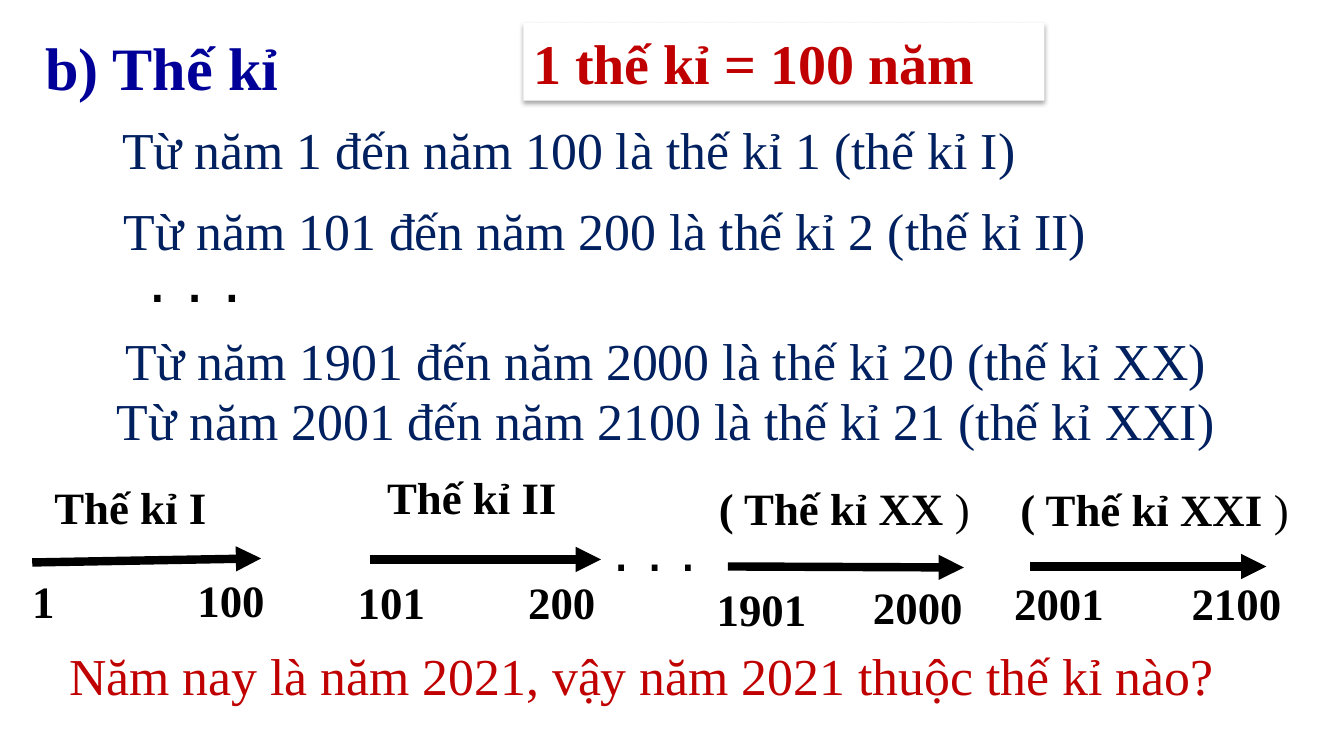
from lxml import etree
from pptx import Presentation
from pptx.dml.color import RGBColor
from pptx.enum.shapes import MSO_CONNECTOR, MSO_SHAPE
from pptx.enum.text import MSO_ANCHOR, MSO_AUTO_SIZE, PP_ALIGN
from pptx.oxml import parse_xml
from pptx.oxml.ns import nsdecls, qn
from pptx.util import Inches, Pt

LEFT, CENTER = PP_ALIGN.LEFT, PP_ALIGN.CENTER
TOP, NO_FIT = MSO_ANCHOR.TOP, MSO_AUTO_SIZE.NONE
RECT, STRAIGHT = MSO_SHAPE.RECTANGLE, MSO_CONNECTOR.STRAIGHT
SERIF, SANS = "Times New Roman", "Arial"
BLACK, WHITE, NAVY, BLUE, RED = "000000", "FFFFFF", "002060", "000099", "C00000"
WIDE, TIGHT = (0.13, 0.07), (0.1, 0.05)


def color(code):
    return RGBColor.from_string(code)


def write(shape, text, size=32, font=SERIF, ink=BLACK, bold=False,
          align=LEFT, inset=WIDE, tail=""):
    """Fill a shape with one paragraph; tail follows in regular weight."""
    frame = shape.text_frame
    frame.word_wrap = True
    frame.auto_size = NO_FIT
    frame.vertical_anchor = TOP
    frame.margin_left = frame.margin_right = Inches(inset[0])
    frame.margin_top = frame.margin_bottom = Inches(inset[1])
    para = frame.paragraphs[0]
    para.alignment = align
    for part, heavy in ((text, bold), (tail, False)):
        if part:
            run = para.add_run()
            run.text = part
            run.font.size = Pt(size)
            run.font.name = font
            run.font.bold = heavy
            run.font.color.rgb = color(ink)


class Board:
    """Style and current slide."""

    def __init__(self, deck):
        self.slide = deck.slides.add_slide(deck.slide_layouts[5])
        self.shapes = self.slide.shapes

    def title(self, box, text, **style):
        head = self.shapes.title
        head.left, head.top, head.width, head.height = map(Inches, box)
        write(head, text, **style)

    def text(self, box, text, **style):
        write(self.shapes.add_textbox(*map(Inches, box)), text, **style)

    def card(self, box, text, **style):
        card = self.shapes.add_shape(RECT, *map(Inches, box))
        card.shadow.inherit = False
        card.fill.solid()
        card.fill.fore_color.rgb = color(WHITE)
        card.line.fill.background()
        glow = parse_xml(
            f'<a:outerShdw {nsdecls("a")} blurRad="{Pt(3.1)}" dist="{Pt(1.8)}" '
            f'dir="5400000" algn="t" rotWithShape="0"><a:srgbClr val="{BLACK}">'
            '<a:alpha val="35000"/></a:srgbClr></a:outerShdw>')
        card.element.spPr.find(qn("a:effectLst")).append(glow)
        write(card, text, **style)

    def arrow(self, *ends):
        line = self.shapes.add_connector(STRAIGHT, *map(Inches, ends))
        line.line.color.rgb = color(BLACK)
        line.line.width = Pt(6)
        props = line.element.spPr.find(qn("a:ln"))
        etree.SubElement(props, qn("a:tailEnd"), type="triangle")
        etree.SubElement(line.element.spPr, qn("a:effectLst"))


def main():
    deck = Presentation()
    deck.slide_width, deck.slide_height = Inches(13.33), Inches(7.5)
    board = Board(deck)

    # Heading and rule
    board.title((0.32, 0.23, 3.88, 0.85), "b) Thế kỉ", size=43, ink=BLUE, bold=True)
    board.card((5.19, 0.23, 5.17, 0.77), "1 thế kỉ = 100 năm",
               size=40, ink=RED, bold=True, inset=TIGHT)

    # Centred sentences: left, top, width, wording, colour
    for left, top, width, words, ink in (
        (0, 1.1, 11.28, "Từ năm 1 đến năm 100 là thế kỉ 1 (thế kỉ I)", NAVY),
        (0.36, 1.9, 11.28, "Từ năm 101 đến năm 200 là thế kỉ 2 (thế kỉ II)", NAVY),
        (0.5, 3.19, 12.2, "Từ năm 1901 đến năm 2000 là thế kỉ 20 (thế kỉ XX)", NAVY),
        (0.5, 3.79, 12.2, "Từ năm 2001 đến năm 2100 là thế kỉ 21 (thế kỉ XXI)", NAVY),
        (0.26, 6.32, 12.2, "Năm nay là năm 2021, vậy năm 2021 thuộc thế kỉ nào?", RED),
    ):
        board.text((left, top, width, 0.76), words, size=37, ink=ink, align=CENTER)

    # Gaps in the sequence
    board.text((1.34, 2.26, 2.94, 0.94), ". . .", size=48, font=SANS)
    board.text((5.95, 5, 1.2, 0.85), ". . .", size=43, font=SANS)

    # Timeline: label, its place, closing mark, arrow, years with their places
    for name, left, top, close, ends, years in (
        ("Thế kỉ I", 0.41, 4.69, "", (0.32, 5.58, 2.59, 5.54),
         (("1", 0.22, 5.64), ("100", 1.86, 5.63))),
        ("Thế kỉ II", 3.71, 4.59, "", (3.67, 5.55, 5.96, 5.55),
         (("101", 3.45, 5.65), ("200", 5.14, 5.65))),
        ("( Thế kỉ XX ", 7, 4.7, ")", (7.22, 5.62, 9.56, 5.63),
         (("1901", 7.01, 5.72), ("2000", 8.56, 5.7))),
        ("( Thế kỉ XXI ", 9.99, 4.71, ")", (10.22, 5.62, 12.56, 5.62),
         (("2001", 9.96, 5.66), ("2100", 11.72, 5.66))),
    ):
        board.text((left, top, 3, 0.67), name, bold=True, tail=close)
        board.arrow(*ends)
        for year, x, y in years:
            board.text((x, y, 1.2, 0.64), year, bold=True, inset=TIGHT)

    deck.save("out.pptx")


if __name__ == "__main__":
    main()
